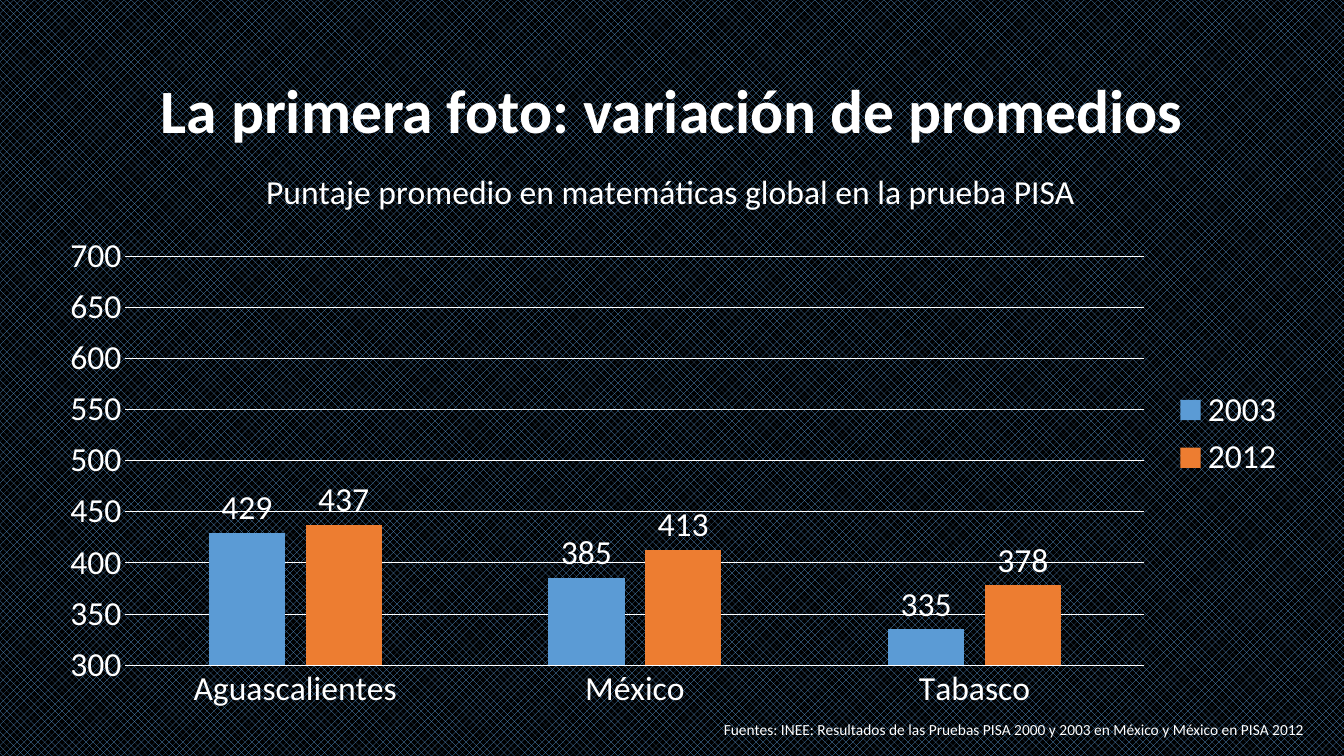
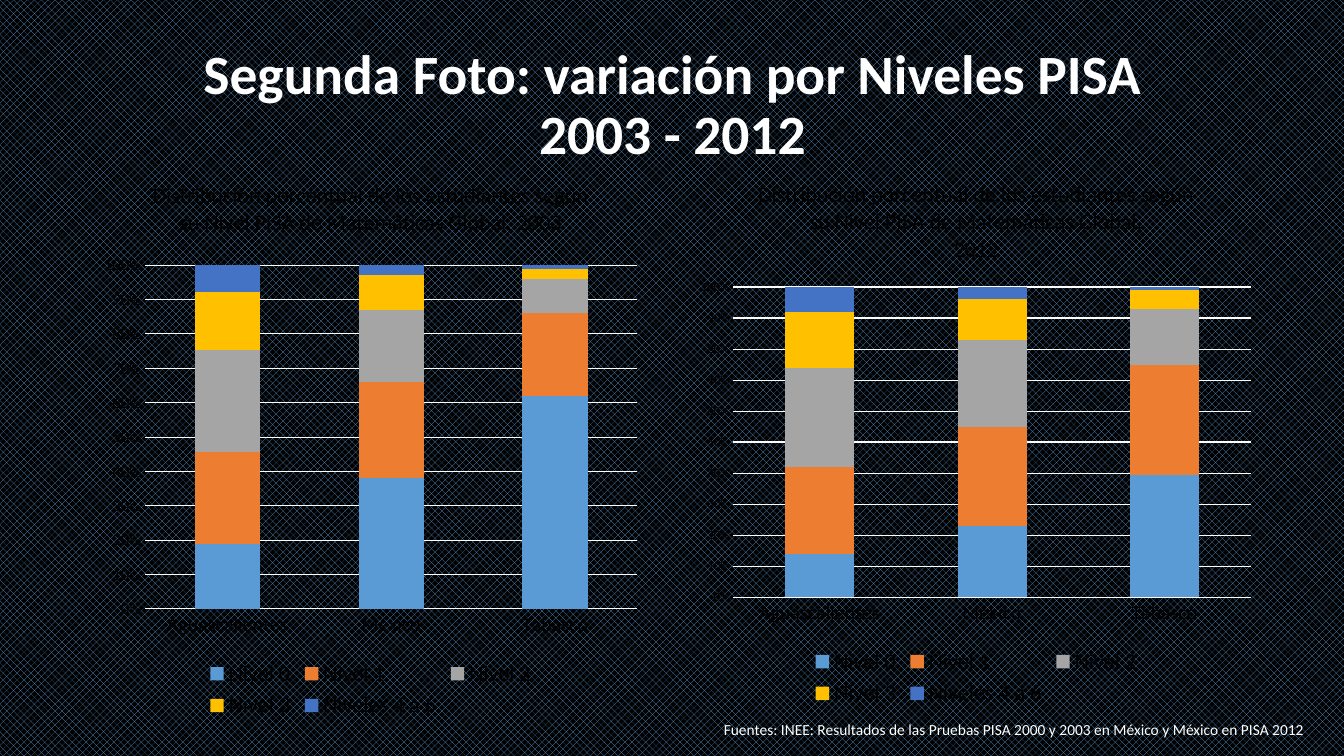
import pptx
import pptx.chart.data
import pptx.dml.color
import pptx.enum.chart
import pptx.enum.dml
import pptx.enum.text
import pptx.util

SCALE = 9144
FONT = "Calibri"
WHITE = "FFFFFF"
BLACK = "000000"
BLUE = "5B9BD5"
ORANGE = "ED7D31"
TINTS = [BLUE, ORANGE, "A5A5A5", "FFC000", "4472C4"]
STATES = ["Aguascalientes", "México", "Tabasco"]
LEVELS = ["Nivel 0", "Nivel 1", "Nivel 2", "Nivel 3", "Niveles 4 a 6"]
SOURCE = ("Fuentes: INEE: Resultados de las Pruebas PISA 2000 y 2003 "
          "en México y México en PISA 2012")
KIND = pptx.enum.chart.XL_CHART_TYPE
PLACE = pptx.enum.chart.XL_LEGEND_POSITION


def px(num):
    return pptx.util.Emu(num * SCALE)


def paint(hue):
    return pptx.dml.color.RGBColor.from_string(hue)


def style(font, size, hue, bold=False):
    font.name = FONT
    font.size = pptx.util.Pt(size)
    font.bold = bold
    font.color.rgb = paint(hue)


def write(para, text, size, hue, bold=False):
    for num, line in enumerate(text.split("\n")):
        if num:
            para.add_line_break()
        run = para.add_run()
        run.text = line
        style(run.font, size, hue, bold)


def add_slide(deck, text, size, high):
    slide = deck.slides.add_slide(deck.slide_layouts[5])
    title = slide.shapes.title
    title.left, title.top = px(92), px(40)
    title.width, title.height = px(1150), px(high)
    frame = title.text_frame
    frame.word_wrap = True
    frame.auto_size = pptx.enum.text.MSO_AUTO_SIZE.NONE
    frame.vertical_anchor = pptx.enum.text.MSO_ANCHOR.MIDDLE
    para = frame.paragraphs[0]
    para.alignment = pptx.enum.text.PP_ALIGN.CENTER
    para.line_spacing = 0.9
    write(para, text, size, WHITE, True)
    return slide


def add_source(slide):
    box = slide.shapes.add_textbox(px(708), px(708), px(601), px(30))
    frame = box.text_frame
    frame.word_wrap = False
    frame.auto_size = pptx.enum.text.MSO_AUTO_SIZE.SHAPE_TO_FIT_TEXT
    para = frame.paragraphs[0]
    para.line_spacing = 1.07
    para.space_after = pptx.util.Pt(8)
    write(para, SOURCE, 11, WHITE)


def style_axis(axis, size, hue):
    axis.major_tick_mark = pptx.enum.chart.XL_TICK_MARK.NONE
    axis.minor_tick_mark = pptx.enum.chart.XL_TICK_MARK.NONE
    axis.format.line.fill.background()
    style(axis.tick_labels.font, size, hue)


def style_line(line):
    line.color.rgb = paint(WHITE)
    line.width = pptx.util.Pt(0.75)


def add_chart(slide, kind, area, head, rows, hue, sizes, place):
    top_size, cat_size, val_size, key_size = sizes
    data = pptx.chart.data.CategoryChartData()
    data.categories = STATES
    for name, nums in rows:
        data.add_series(name, nums)
    chart = slide.shapes.add_chart(kind, *map(px, area), data).chart
    style(chart.font, 11, WHITE)
    chart.has_title = True
    write(chart.chart_title.text_frame.paragraphs[0], head, top_size, hue)
    chart.has_legend = True
    chart.legend.position = place
    chart.legend.include_in_layout = False
    style(chart.legend.font, key_size, hue)
    style_axis(chart.category_axis, cat_size, hue)
    style_axis(chart.value_axis, val_size, hue)
    chart.value_axis.has_major_gridlines = True
    style_line(chart.value_axis.major_gridlines.format.line)
    plot = chart.plots[0]
    plot.vary_by_categories = False
    for bar, tint in zip(plot.series, TINTS):
        bar.format.fill.solid()
        bar.format.fill.fore_color.rgb = paint(tint)
        bar.invert_if_negative = False
    return chart


def add_means(slide):
    rows = [("2003", [429, 385, 335]), ("2012", [437, 413, 378])]
    chart = add_chart(
        slide, KIND.COLUMN_CLUSTERED, (45, 145, 1240, 571),
        "Puntaje promedio en matemáticas global en la prueba PISA",
        rows, WHITE, (24, 24, 24, 24), PLACE.RIGHT)
    style_line(chart.category_axis.format.line)
    axis = chart.value_axis
    axis.minimum_scale, axis.maximum_scale = 300, 700
    axis.major_unit = 50
    plot = chart.plots[0]
    plot.gap_width, plot.overlap = 219, -27
    plot.has_data_labels = True
    tags = plot.data_labels
    tags.show_value = True
    tags.position = pptx.enum.chart.XL_LABEL_POSITION.OUTSIDE_END
    style(tags.font, 24, WHITE)


def add_shares(slide, area, head, nums, val_size):
    chart = add_chart(
        slide, KIND.COLUMN_STACKED_100, area,
        "Distribución porcentual de los estudiantes según su Nivel " + head,
        zip(LEVELS, nums), BLACK, (16, 14, val_size, 16), PLACE.BOTTOM)
    tags = chart.value_axis.tick_labels
    tags.number_format = "0%"
    tags.number_format_is_linked = False
    plot = chart.plots[0]
    plot.gap_width, plot.overlap = 150, 100


def main():
    deck = pptx.Presentation()
    deck.slide_width, deck.slide_height = px(1333), px(750)
    fill = deck.slide_master.background.fill
    fill.patterned()
    fill.pattern = pptx.enum.dml.MSO_PATTERN.PERCENT_50
    fill.fore_color.rgb = paint(BLUE)
    fill.back_color.rgb = paint(BLACK)

    first = add_slide(
        deck, "La primera foto: variación de promedios", 44, 145)
    add_means(first)
    add_source(first)

    second = add_slide(
        deck, "Segunda Foto: variación por Niveles PISA\n2003 - 2012",
        39.6, 131)
    add_shares(
        second, (92, 158, 551, 560), "PISA de Matemáticas Global, 2003",
        [[19, 38, 62], [27, 28, 24], [30, 21, 10], [17, 10, 3], [8, 3, 1]],
        12)
    add_source(second)
    add_shares(
        second, (684, 159, 568, 547), "PISA de Matemáticas Global,\n2012",
        [[14, 23, 39], [28, 32, 35], [32, 28, 18], [18, 13, 6], [8, 4, 1]],
        9)
    deck.save("out.pptx")


if __name__ == "__main__":
    main()
